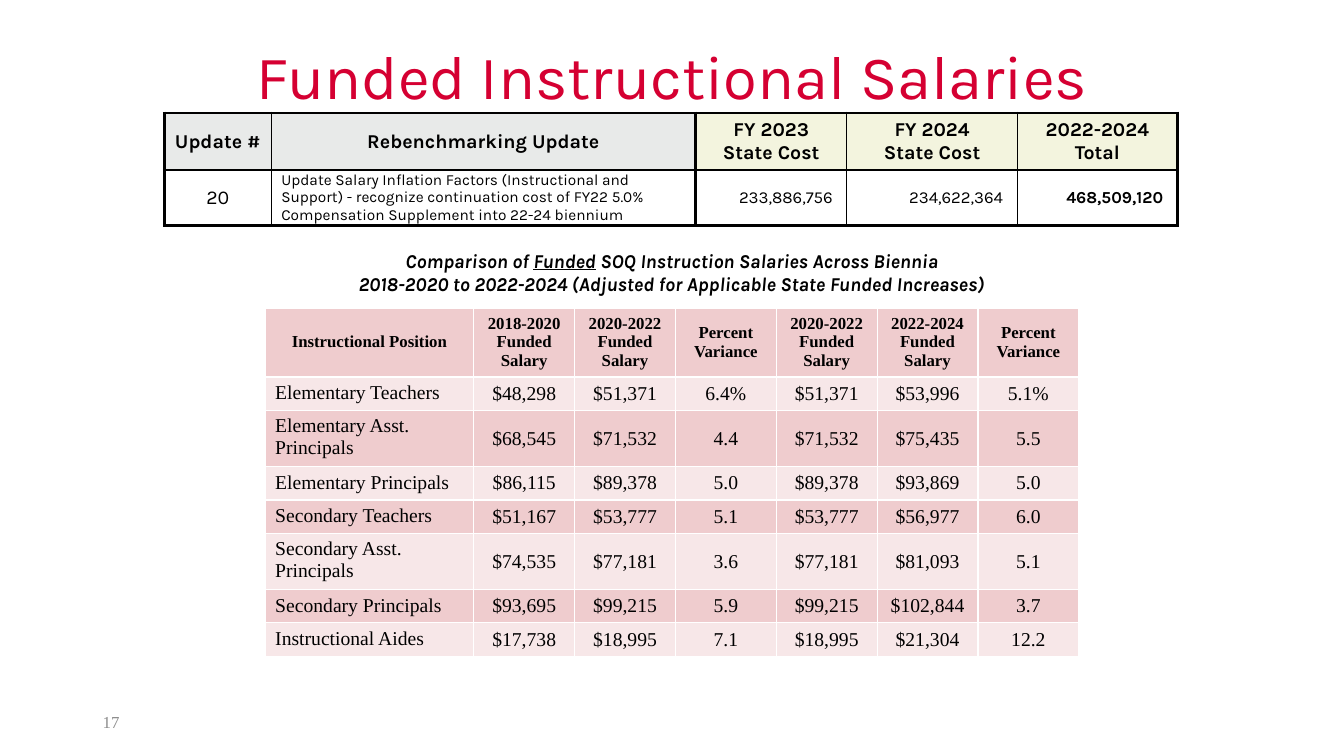
from lxml.etree import SubElement
from pptx import Presentation
from pptx.dml.color import RGBColor
from pptx.enum.text import MSO_ANCHOR, MSO_AUTO_SIZE, PP_ALIGN
from pptx.oxml.ns import qn
from pptx.util import Inches, Pt

COLORS = {
    "title": "D50032", "text": "000000", "white": "FFFFFF", "number": "8C8C8C",
    "dark_band": "EFCCCE", "light_band": "F7E7E8",
    "update_header": "E8EAE9", "cost_header": "F3F4DE",
}
SANS, SERIF = "Karla", "Times New Roman"
THIN, THICK = 1, 2.25

UPDATE_WIDTHS = [1.06, 4.21, 1.5, 1.69, 1.59]
UPDATE_HEADERS = ["Update #", "Rebenchmarking Update", "FY 2023\nState Cost",
                  "FY 2024\nState Cost", "2022-2024 Total"]
UPDATE_VALUES = [
    "20",
    "Update Salary Inflation Factors (Instructional and Support) - recognize "
    "continuation cost of FY22 5.0% Compensation Supplement into 22-24 biennium",
    "233,886,756 ", "234,622,364 ", "468,509,120 ",
]

SALARY_WIDTHS = [2.07] + [1] * 6
SALARY_HEIGHTS = [0.68, 0.69, 0.33, 0.56, 0.33, 0.33, 0.56, 0.33, 0.33]
SALARY_CAPTION = ("Comparison of _Funded_ SOQ Instruction Salaries Across Biennia\n"
                  "2018-2020 to 2022-2024 (Adjusted for Applicable State Funded Increases)")
VARIANCE = "Percent\nVariance"
SALARY_HEADERS = ["Instructional Position"] + [
    heading
    for before, after in (("2018-2020", "2020-2022"), ("2020-2022", "2022-2024"))
    for heading in (f"{before}\nFunded\nSalary", f"{after}\nFunded\nSalary", VARIANCE)
]
# Position, salaries of the three biennia, and the variance after each step
SALARIES = [
    ("Elementary Teachers", 48298, 51371, 53996, "6.4%", "5.1%"),
    ("Elementary Asst. Principals", 68545, 71532, 75435, "4.4", "5.5"),
    ("Elementary Principals", 86115, 89378, 93869, "5.0", "5.0"),
    ("Secondary Teachers", 51167, 53777, 56977, "5.1", "6.0"),
    ("Secondary Asst. Principals", 74535, 77181, 81093, "3.6", "5.1"),
    ("Secondary Principals", 93695, 99215, 102844, "5.9", "3.7"),
    ("Instructional Aides", 17738, 18995, 21304, "7.1", "12.2"),
]


def write_text(frame, text, size, font=SANS, color="text", bold=False, italic=False,
               align=PP_ALIGN.CENTER, line_spacing=None):
    """Write one paragraph per line; parts between underscores are underlined."""
    for index, line in enumerate(text.split("\n")):
        paragraph = frame.paragraphs[0] if index == 0 else frame.add_paragraph()
        paragraph.alignment = align
        if line_spacing:
            paragraph.line_spacing = line_spacing
        for part_index, part in enumerate(line.split("_")):
            run = paragraph.add_run()
            run.text = part
            run.font.name = font
            run.font.size = Pt(size)
            run.font.bold = bold
            run.font.italic = italic
            run.font.underline = part_index % 2 == 1
            run.font.color.rgb = RGBColor.from_string(COLORS[color])


def set_borders(cell, color, left=THIN, right=THIN, top=THIN, bottom=THIN):
    properties = cell._tc.get_or_add_tcPr()
    sides = {"a:lnL": left, "a:lnR": right, "a:lnT": top, "a:lnB": bottom}
    for index, (tag, width) in enumerate(sides.items()):
        line = SubElement(properties, qn(tag), w=str(Pt(width)))
        fill = SubElement(line, qn("a:solidFill"))
        SubElement(fill, qn("a:srgbClr"), val=COLORS[color])
        properties.insert(index, line)


def format_cell(cell, fill=None, anchor=MSO_ANCHOR.MIDDLE, margins=(0.1, 0.05, 0.1, 0.05)):
    cell.vertical_anchor = anchor
    cell.margin_left, cell.margin_top, cell.margin_right, cell.margin_bottom = map(Inches, margins)
    if fill:
        cell.fill.solid()
        cell.fill.fore_color.rgb = RGBColor.from_string(COLORS[fill])
    else:
        cell.fill.background()


def add_plain_table(slide, left, top, widths, heights):
    table = slide.shapes.add_table(
        len(heights), len(widths), Inches(left), Inches(top),
        Inches(sum(widths)), Inches(sum(heights))).table
    table.horz_banding = False
    for column, width in zip(table.columns, widths):
        column.width = Inches(width)
    for row, height in zip(table.rows, heights):
        row.height = Inches(height)
    return table


def add_title(slide, text):
    title = slide.shapes.title
    title.left, title.top, title.width, title.height = map(Inches, (0.92, 0.32, 11.5, 0.93))
    title.text_frame.auto_size = MSO_AUTO_SIZE.NONE
    title.text_frame.vertical_anchor = MSO_ANCHOR.MIDDLE
    write_text(title.text_frame, text, 44, color="title", line_spacing=0.9)


def add_salary_table(slide):
    table = add_plain_table(slide, 2.63, 2.37, SALARY_WIDTHS, SALARY_HEIGHTS)
    caption = table.cell(0, 0)
    caption.merge(table.cell(0, len(SALARY_WIDTHS) - 1))
    for cell in table.rows[0].cells:
        format_cell(cell)
        set_borders(cell, "white", bottom=3)
    write_text(caption.text_frame, SALARY_CAPTION, 14, bold=True, italic=True)

    rows = [SALARY_HEADERS]
    for position, first, second, third, variance, next_variance in SALARIES:
        rows.append([position, f"${first:,}", f"${second:,}", variance,
                     f"${second:,}", f"${third:,}", next_variance])
    for row_index, row in enumerate(rows, start=1):
        is_header = row_index == 1
        for column_index, text in enumerate(row):
            is_position = column_index == 0 and not is_header
            cell = table.cell(row_index, column_index)
            format_cell(cell, "dark_band" if row_index % 2 else "light_band",
                        MSO_ANCHOR.TOP if is_position else MSO_ANCHOR.MIDDLE)
            set_borders(cell, "white", top=3 if is_header else THIN)
            write_text(cell.text_frame, text, 12 if is_header else 14, SERIF, bold=is_header,
                       align=PP_ALIGN.LEFT if is_position else PP_ALIGN.CENTER)


def add_slide_number(slide, number):
    box = slide.shapes.add_textbox(Inches(0.92), Inches(6.96), Inches(3), Inches(0.4))
    box.text_frame.word_wrap = True
    box.text_frame.vertical_anchor = MSO_ANCHOR.MIDDLE
    write_text(box.text_frame, number, 12, SERIF, "number", align=PP_ALIGN.LEFT)


def add_update_table(slide):
    table = add_plain_table(slide, 1.63, 1.12, UPDATE_WIDTHS, [0.56, 0.54])
    value_sizes = [14, 11, 12, 12, 12]
    value_aligns = [PP_ALIGN.CENTER, PP_ALIGN.LEFT] + [PP_ALIGN.RIGHT] * 3
    last = len(UPDATE_WIDTHS) - 1
    for index, (header, value) in enumerate(zip(UPDATE_HEADERS, UPDATE_VALUES)):
        left = THICK if index in (0, 2) else THIN
        right = THICK if index in (1, last) else THIN

        header_cell = table.cell(0, index)
        format_cell(header_cell, "update_header" if index < 2 else "cost_header")
        set_borders(header_cell, "text", left, right, top=THICK)
        write_text(header_cell.text_frame, header, 14, bold=True)

        value_cell = table.cell(1, index)
        side = 0.1 if index else 0.01
        format_cell(value_cell, margins=(side, 0, side, 0))
        set_borders(value_cell, "text", left, right, bottom=THICK)
        write_text(value_cell.text_frame, value, value_sizes[index],
                   bold=index == last, align=value_aligns[index])


def main():
    presentation = Presentation()
    presentation.slide_width, presentation.slide_height = Inches(13.33), Inches(7.5)
    slide = presentation.slides.add_slide(presentation.slide_layouts[5])
    add_title(slide, "Funded Instructional Salaries")
    add_salary_table(slide)
    add_slide_number(slide, "17")
    add_update_table(slide)
    presentation.save("out.pptx")


if __name__ == "__main__":
    main()
